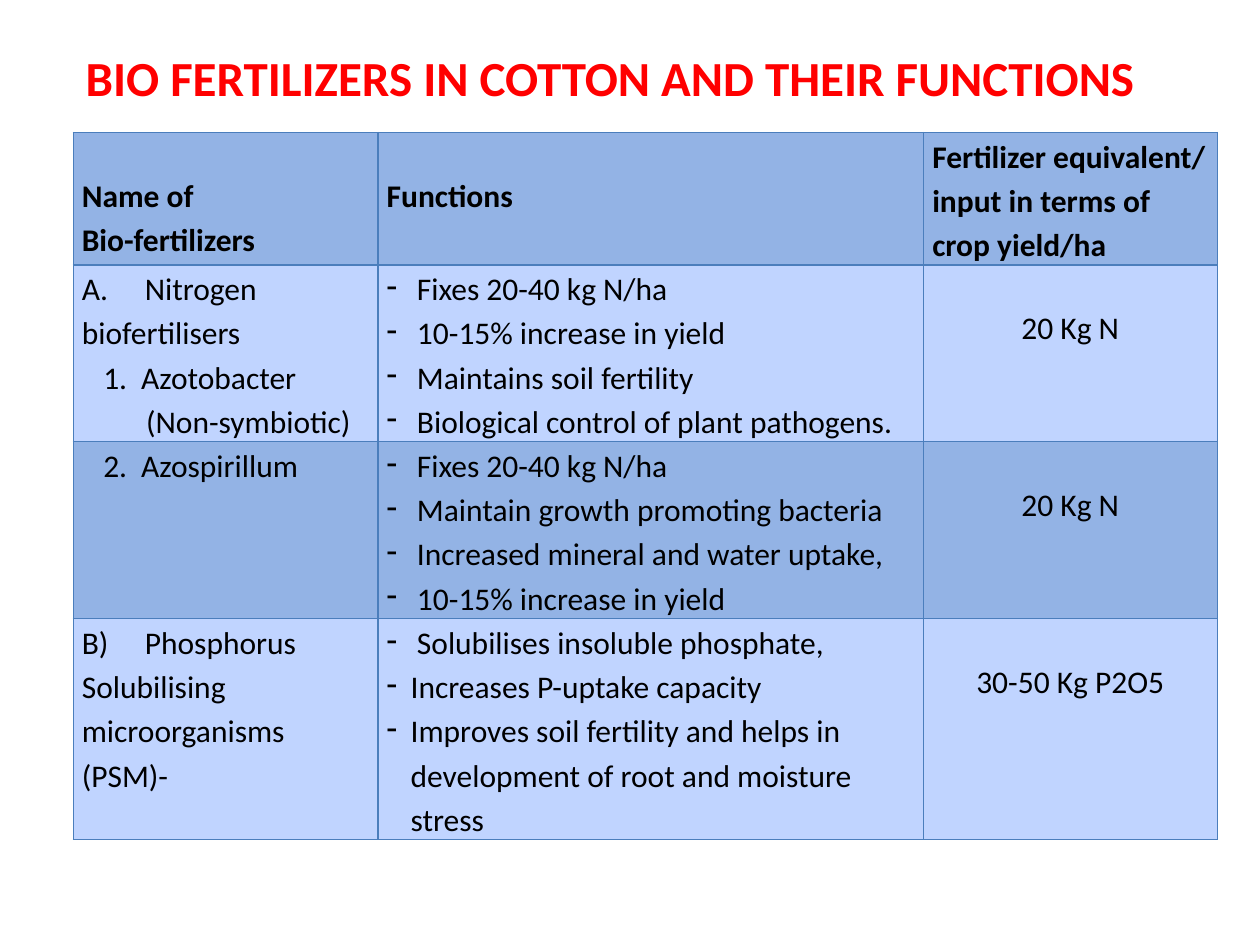
import pptx
import pptx.util
import pptx.dml.color
import pptx.enum.text
import pptx.oxml
import pptx.oxml.ns

Inches, Pt = pptx.util.Inches, pptx.util.Pt
align = pptx.enum.text.PP_ALIGN
COLORS = {"title": "FF0000", "text": "000000", "border": "4B7EBC",
          "dark": "93B3E5", "light": "C0D4FF"}
FONT = "Calibri"
NAMESPACE = pptx.oxml.ns.nsdecls("a")


def add_run(para, text, size, color, bold):
    span = para.add_run()
    span.text = text
    span.font.name, span.font.size, span.font.bold = FONT, Pt(size), bold
    span.font.color.rgb = pptx.dml.color.RGBColor.from_string(COLORS[color])


def add_xml(parent, xml):
    parent.append(pptx.oxml.parse_xml(xml.replace(" ", f" {NAMESPACE} ", 1)))


deck = pptx.Presentation()
deck.slide_width, deck.slide_height = Inches(10), Inches(7.5)
page = deck.slides.add_slide(deck.slide_layouts[5])

# Title
title = page.shapes.title
title.left, title.top, title.width, title.height = map(Inches, (0.58, 0.33, 8.92, 0.57))
frame = title.text_frame
frame.word_wrap = True
frame.auto_size = pptx.enum.text.MSO_AUTO_SIZE.NONE
frame.vertical_anchor = pptx.enum.text.MSO_ANCHOR.TOP
frame.paragraphs[0].alignment = align.LEFT
add_run(frame.paragraphs[0], "BIO FERTILIZERS IN COTTON AND THEIR FUNCTIONS", 28, "title", True)

# Paragraph kinds: left margin, first-line indent, bullet or tab element
DASH = '<a:buChar char="-"/>'
KINDS = {
    "plain": (0, 0, None),
    "group": (0, 0, f'<a:tabLst ><a:tab pos="{Inches(0.33)}" algn="l"/></a:tabLst>'),
    "first": (0.47, -0.3, '<a:buAutoNum type="arabicPeriod"/>'),
    "second": (0.47, -0.3, '<a:buAutoNum type="arabicPeriod" startAt="2"/>'),
    "note": (0.51, 0, None),
    "dash": (0.24, -0.24, DASH),
    "tight": (0.19, -0.19, DASH),
}

# Each cell: space above the text, then (kind, text) lines
LOWERED = 0.31
ROWS = [
    [(LOWERED, [("plain", "Name of"), ("plain", "Bio-fertilizers")]),
     (LOWERED, [("plain", "Functions")]),
     (0, [("plain", "Fertilizer equivalent/ input in terms of crop yield/ha")])],
    [(0, [("group", "A.\tNitrogen biofertilisers"), ("first", "Azotobacter"),
          ("note", "(Non-symbiotic)")]),
     (0, [("dash", "Fixes 20-40 kg N/ha"), ("dash", "10-15% increase in yield"),
          ("dash", "Maintains soil fertility"),
          ("dash", "Biological control of plant pathogens.")]),
     (LOWERED, [("plain", "20 Kg N")])],
    [(0, [("second", "Azospirillum")]),
     (0, [("dash", "Fixes 20-40 kg N/ha"), ("dash", "Maintain growth promoting bacteria"),
          ("dash", "Increased mineral and water uptake,"),
          ("dash", "10-15% increase in yield")]),
     (LOWERED, [("plain", "20 Kg N")])],
    [(0, [("group", "B)\tPhosphorus Solubilising microorganisms (PSM)-")]),
     (0, [("dash", "Solubilises insoluble phosphate,"), ("tight", "Increases P-uptake capacity"),
          ("tight", "Improves soil fertility and helps in development of root "
                    "and moisture stress")]),
     (LOWERED, [("plain", "30-50 Kg P2O5")])],
]
COLUMN_WIDTHS = (2.42, 4.33, 2.33)
ROW_HEIGHTS = (1.05, 1.4, 1.4, 1.75)

# Table grid
table = page.shapes.add_table(
    len(ROWS), len(COLUMN_WIDTHS), Inches(0.58), Inches(1.05),
    Inches(sum(COLUMN_WIDTHS)), Inches(sum(ROW_HEIGHTS))).table
table.horz_banding = False
for column, width in zip(table.columns, COLUMN_WIDTHS):
    column.width = Inches(width)
for row, height in zip(table.rows, ROW_HEIGHTS):
    row.height = Inches(height)

# Table cells
for row_number, row in enumerate(ROWS):
    for column_number, (space_above, lines) in enumerate(row):
        cell = table.cell(row_number, column_number)
        cell.margin_left = cell.margin_right = Inches(0.07)
        cell.margin_top, cell.margin_bottom = Inches(space_above), 0
        for side in "LRTB":
            add_xml(cell._tc.get_or_add_tcPr(),
                    f'<a:ln{side} w="{Pt(0.75)}"><a:solidFill>'
                    f'<a:srgbClr val="{COLORS["border"]}"/></a:solidFill></a:ln{side}>')
        cell.fill.solid()
        shade = "light" if row_number % 2 else "dark"
        cell.fill.fore_color.rgb = pptx.dml.color.RGBColor.from_string(COLORS[shade])
        for number, (kind, text) in enumerate(lines):
            box = cell.text_frame
            para = box.add_paragraph() if number else box.paragraphs[0]
            left, indent, extra = KINDS[kind]
            properties = para._p.get_or_add_pPr()
            properties.set("marL", str(Inches(left)))
            properties.set("indent", str(Inches(indent)))
            if extra:
                add_xml(properties, extra)
            para.line_spacing = 1.15
            centred = row_number > 0 and column_number == 2
            para.alignment = align.CENTER if centred else align.LEFT
            add_run(para, text, 18, "text", row_number == 0)

deck.save("out.pptx")
